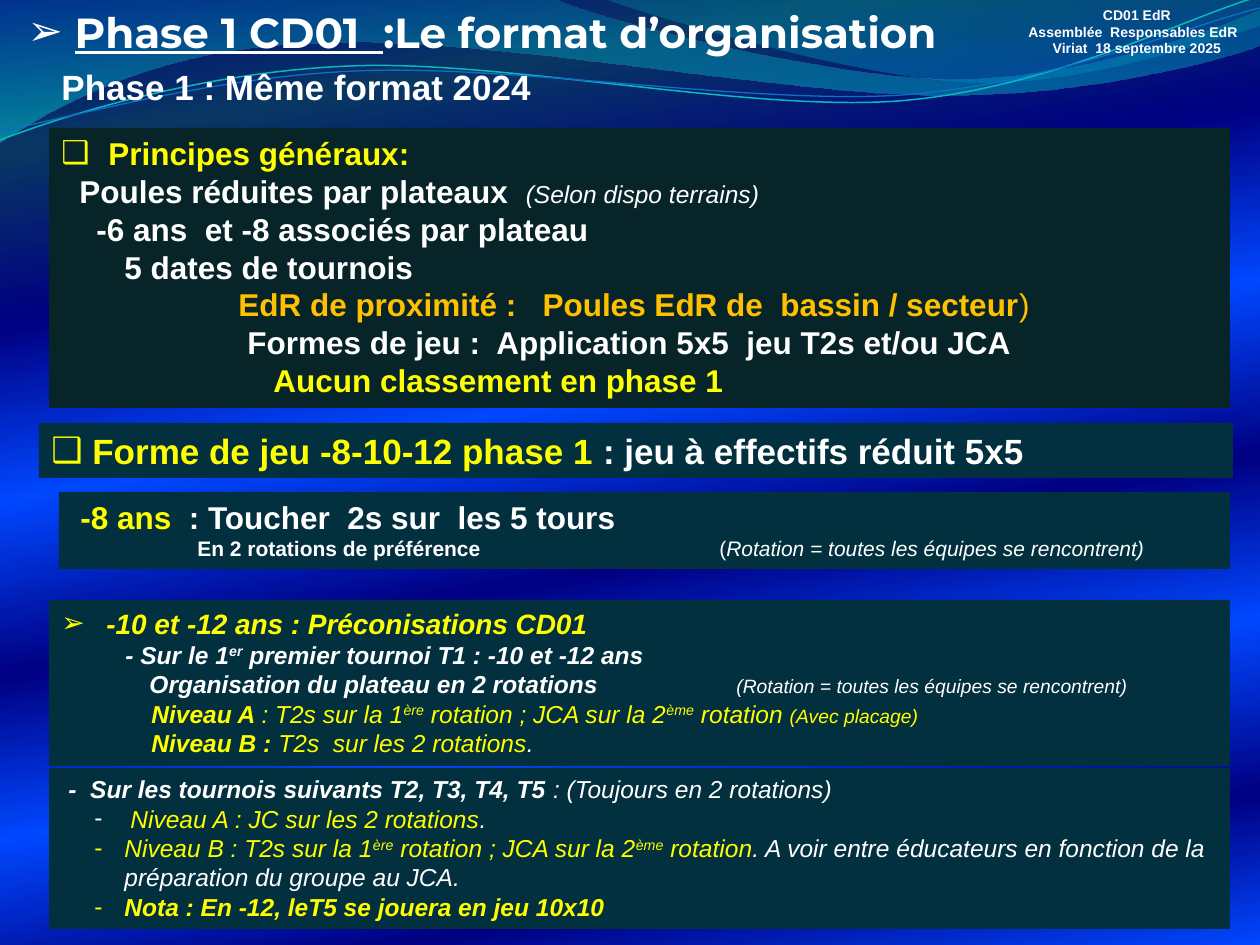
from dataclasses import dataclass

from lxml import etree
from pptx import Presentation
from pptx.dml.color import RGBColor
from pptx.enum.shapes import MSO_SHAPE
from pptx.enum.text import MSO_ANCHOR, MSO_AUTO_SIZE, PP_ALIGN
from pptx.oxml.ns import qn
from pptx.util import Pt

RECTANGLE = MSO_SHAPE.RECTANGLE
TOP = MSO_ANCHOR.TOP
NO_AUTOFIT = MSO_AUTO_SIZE.NONE
LEFT, CENTER = PP_ALIGN.LEFT, PP_ALIGN.CENTER
PX = 914400 / 126
TITLE_ONLY = 5
LINE_HEIGHT = 1.2


@dataclass(frozen=True)
class Theme:
    font: str = "Arial"
    title_font: str = "Montserrat"
    white: str = "FFFFFF"
    yellow: str = "FFFF00"
    orange: str = "FFC000"
    dark_panel: str = "072428"
    panel: str = "02303E"
    title: int = 24
    heading: int = 20
    large: int = 18
    medium: int = 16
    body: int = 14
    small: int = 12
    note: int = 11
    tiny: int = 8


THEME = Theme()
WHITE, YELLOW = THEME.white, THEME.yellow
BODY = THEME.body

# Gradient stops: position %, colour, opacity %
BACKGROUND = [(0, "000082", 100), (13, "083763", 100), (28, "000082", 100),
              (43, "0047FF", 100), (58, "000082", 100), (72, "0047FF", 100),
              (87, "000082", 100), (100, "0047FF", 100)]

# Wave outlines: pairs are corners, sextuples are Bézier curves
WAVES = [
    ([(0, -1), (554, -1), (600, 21, 837, 79, 955, 79), (1075, 79, 1207, 33, 1260, 11),
      (1261, 45), (1239, 55, 1096, 96, 940, 95), (784, 95, 481, 35, 324, 43),
      (163, 44, 58, 105, -1, 142)], [(0, "0074A1", 45), (100, "00C6CF", 55)]),
    ([(604, -1), (641, 14, 859, 78, 969, 82), (1079, 87, 1211, 40, 1260, 26),
      (1260, 0)], [(0, "00A1A9", 30), (80, "008BBF", 45)]),
]
WAVE_LINES = [
    ([(0, 140), (60, 117, 199, 72, 349, 66), (498, 59, 747, 112, 898, 101),
      (1050, 89, 1182, 19, 1257, -3)], "0AB8BF", 0.85),
    ([(0, 131), (59, 121, 207, 77, 357, 71), (508, 64, 752, 105, 903, 95),
      (1053, 84, 1186, 26, 1260, 8)], "0F6FC6", 0.75),
]


def px(value):
    return round(value * PX)


def set_gradient(fill, parent, stops, angle):
    fill.gradient()
    gradient = next(parent.iter(qn("a:gradFill")))
    stop_list = gradient.find(qn("a:gsLst"))
    for stop in list(stop_list):
        stop_list.remove(stop)
    for position, color, opacity in stops:
        stop = etree.SubElement(stop_list, qn("a:gs"), pos=str(position * 1000))
        rgb = etree.SubElement(stop, qn("a:srgbClr"), val=color)
        if opacity < 100:
            etree.SubElement(rgb, qn("a:alpha"), val=str(opacity * 1000))
    gradient.find(qn("a:lin")).set("ang", str(angle * 60000))


def add_outline(slide, outline, close):
    """Build a freeform through the corners, then bend its segments into curves."""
    builder = slide.shapes.build_freeform(*outline[0], scale=PX)
    builder.add_line_segments([segment[-2:] for segment in outline[1:]], close=close)
    shape = builder.convert_to_shape()
    shape.shadow.inherit = False
    outline_path = next(shape._element.iter(qn("a:path")))
    outline_path.set("w", str(shape.width))
    outline_path.set("h", str(shape.height))
    for child in list(outline_path):
        outline_path.remove(child)
    for index, segment in enumerate(outline):
        kind = "a:cubicBezTo" if len(segment) == 6 else "a:lnTo" if index else "a:moveTo"
        command = etree.SubElement(outline_path, qn(kind))
        for x, y in zip(segment[::2], segment[1::2]):
            etree.SubElement(command, qn("a:pt"), x=str(px(x) - shape.left),
                             y=str(px(y) - shape.top))
    if close:
        etree.SubElement(outline_path, qn("a:close"))
    return shape


def add_waves(slide):
    for outline, stops in WAVES:
        shape = add_outline(slide, outline, True)
        set_gradient(shape.fill, shape._element.spPr, stops, 90)
        shape.line.fill.background()
    for outline, color, width in WAVE_LINES:
        shape = add_outline(slide, outline, False)
        shape.fill.background()
        shape.line.color.rgb = RGBColor.from_string(color)
        shape.line.width = Pt(width)


def line(*runs, margin=0, first=0, bullet=None, bullet_color=YELLOW, tabs=(), align=LEFT):
    """Describe a paragraph; each run is (text, size, colour, flags b, i, u, ^)."""
    return dict(runs=runs, margin=margin, first=first, bullet=bullet,
                bullet_color=bullet_color, tabs=tabs, align=align)


def format_paragraph(paragraph, content):
    properties = paragraph._p.get_or_add_pPr()
    if content["tabs"]:
        tab_list = etree.SubElement(properties, qn("a:tabLst"))
        for position in content["tabs"]:
            etree.SubElement(tab_list, qn("a:tab"), pos=str(px(position)), algn="l")
    else:
        properties.set("marL", str(px(content["margin"])))
        properties.set("indent", str(px(content["first"])))
        if content["bullet"]:
            color = etree.SubElement(properties, qn("a:buClr"))
            etree.SubElement(color, qn("a:srgbClr"), val=content["bullet_color"])
            etree.SubElement(properties, qn("a:buFont"), typeface=THEME.font)
            etree.SubElement(properties, qn("a:buChar"), char=content["bullet"])
        else:
            etree.SubElement(properties, qn("a:buNone"))
    paragraph.alignment = content["align"]
    paragraph.line_spacing = Pt(LINE_HEIGHT * max(run[1] for run in content["runs"]))


def write_text(shape, lines, font=THEME.font):
    frame = shape.text_frame
    frame.word_wrap = True
    frame.auto_size = NO_AUTOFIT
    frame.vertical_anchor = TOP
    for index, content in enumerate(lines):
        paragraph = frame.add_paragraph() if index else frame.paragraphs[0]
        format_paragraph(paragraph, content)
        for text, size, color, flags in content["runs"]:
            run = paragraph.add_run()
            run.text = text
            run.font.name = font
            run.font.size = Pt(size)
            run.font.color.rgb = RGBColor.from_string(color)
            run.font.bold = "b" in flags
            run.font.italic = "i" in flags
            run.font.underline = "u" in flags
            if "^" in flags:
                run.font._element.set("baseline", "30000")


def add_title(slide, box, content):
    title = slide.shapes.title
    slide.shapes._spTree.append(title._element)  # above the waves
    title.left, title.top, title.width, title.height = map(px, box)
    write_text(title, [content], THEME.title_font)


def add_label(slide, box, *lines):
    write_text(slide.shapes.add_textbox(*map(px, box)), lines)


def add_panel(slide, box, color, *lines):
    shape = slide.shapes.add_shape(RECTANGLE, *map(px, box))
    shape.shadow.inherit = False
    shape.fill.solid()
    shape.fill.fore_color.rgb = RGBColor.from_string(color)
    shape.line.fill.background()
    write_text(shape, lines)


def rotation_runs(level, level_flags, start, end):
    return [(level, BODY, YELLOW, level_flags), (start, BODY, YELLOW, "i"),
            ("ère", BODY, YELLOW, "i^"), (" rotation ; JCA sur la 2", BODY, YELLOW, "i"),
            ("ème", BODY, YELLOW, "i^"), (end, BODY, YELLOW, "i")]


def main():
    presentation = Presentation()
    presentation.slide_width, presentation.slide_height = px(1260), px(945)
    slide = presentation.slides.add_slide(presentation.slide_layouts[TITLE_ONLY])
    set_gradient(slide.background.fill, slide._element, BACKGROUND, 80)
    add_waves(slide)

    # Header
    add_title(slide, (15, 0, 1002, 63), line(
        ("Phase 1 CD01  ", THEME.title, WHITE, "bu"),
        (":Le format d’organisation", THEME.title, WHITE, "b"),
        margin=47, first=-47, bullet="➢", bullet_color=WHITE))
    add_label(slide, (49, 59, 536, 55),
              line(("Phase 1 : Même format 2024", THEME.heading, WHITE, "b")))
    add_label(slide, (1014, 0, 246, 63), *[
        line((text, THEME.tiny, WHITE, "b"), align=CENTER)
        for text in ("CD01 EdR", "Assemblée  Responsables EdR  ", "Viriat  18 septembre 2025")])

    # General principles
    large = THEME.large
    add_panel(
        slide, (49, 128, 1181, 280), THEME.dark_panel,
        line(("Principes généraux:", large, YELLOW, "b"), margin=47, first=-47, bullet="❑"),
        line(("Poules réduites par plateaux  ", large, WHITE, "b"),
             ("(Selon dispo terrains)", BODY, WHITE, "i"), margin=18),
        line(("-6 ans  et -8 associés par plateau", large, WHITE, "b"), margin=35),
        line(("5 dates de tournois", large, WHITE, "b"), margin=63),
        line(("EdR de proximité :   Poules EdR de  bassin / secteur", large, THEME.orange, "b"),
             (")", large, THEME.orange, ""), margin=177),
        line(("Formes de jeu :  Application 5x5  jeu T2s et/ou JCA", large, WHITE, "b"), margin=186),
        line(("Aucun classement en phase 1", large, YELLOW, "b"), margin=212))

    # Form of play
    add_panel(slide, (39, 423, 1194, 55), THEME.panel, line(
        ("Forme de jeu -8-10-12 phase 1 ", THEME.heading, YELLOW, "b"),
        (": jeu à effectifs réduit 5x5", THEME.heading, WHITE, "b"),
        margin=41, first=-41, bullet="❑"))
    add_panel(
        slide, (59, 492, 1171, 77), THEME.panel,
        line(("-8 ans  ", large, YELLOW, "b"),
             (": Toucher  2s sur  les 5 tours", large, WHITE, "b"), margin=9),
        line(("\tEn 2 rotations de préférence\t", THEME.small, WHITE, "b"),
             ("(", THEME.small, WHITE, ""),
             ("Rotation = toutes les équipes se rencontrent)", THEME.small, WHITE, "i"),
             tabs=(126, 648)))

    # Under 10 and under 12: first tournament, then the following ones
    add_panel(
        slide, (49, 600, 1181, 166), THEME.panel,
        line(("-10 et -12 ans : Préconisations CD01", THEME.medium, YELLOW, "bi"),
             margin=45, first=-45, bullet="➢"),
        line(("- Sur le 1", BODY, WHITE, "bi"), ("er", BODY, WHITE, "bi^"),
             (" premier tournoi T1 : -10 et -12 ans", BODY, WHITE, "bi"), margin=64),
        line(("\tOrganisation du plateau en 2 rotations\t", BODY, WHITE, "bi"),
             ("(Rotation = toutes les équipes se rencontrent)", THEME.note, WHITE, "i"),
             tabs=(88, 675)),
        line(*rotation_runs("Niveau A ", "bi", ": T2s sur la 1", " rotation "),
             ("(Avec placage)", THEME.note, YELLOW, "i"), margin=90),
        line(("Niveau B : ", BODY, YELLOW, "bi"), ("T2s  sur les 2 rotations", BODY, YELLOW, "i"),
             (".", BODY, WHITE, "i"), margin=90))
    add_panel(
        slide, (49, 768, 1181, 161), THEME.panel,
        line(("-  Sur les tournois suivants T2, T3, T4, T5 ", BODY, WHITE, "bi"),
             (": (Toujours en 2 rotations)", BODY, WHITE, "i"), margin=7),
        line(("Niveau A : JC sur les 2 rotations", BODY, YELLOW, "i"), (".", BODY, WHITE, "i"),
             margin=69, first=-36, bullet="-", bullet_color=WHITE),
        line(*rotation_runs("Niveau B : ", "i", "T2s sur la 1", " rotation"),
             (". A voir entre éducateurs en fonction de la préparation du groupe au JCA.",
              BODY, WHITE, "i"), margin=63, first=-30, bullet="-"),
        line(("Nota : En -12, leT5 se jouera en jeu 10x10", BODY, YELLOW, "bi"),
             margin=63, first=-30, bullet="-"))

    presentation.save("out.pptx")


if __name__ == "__main__":
    main()
